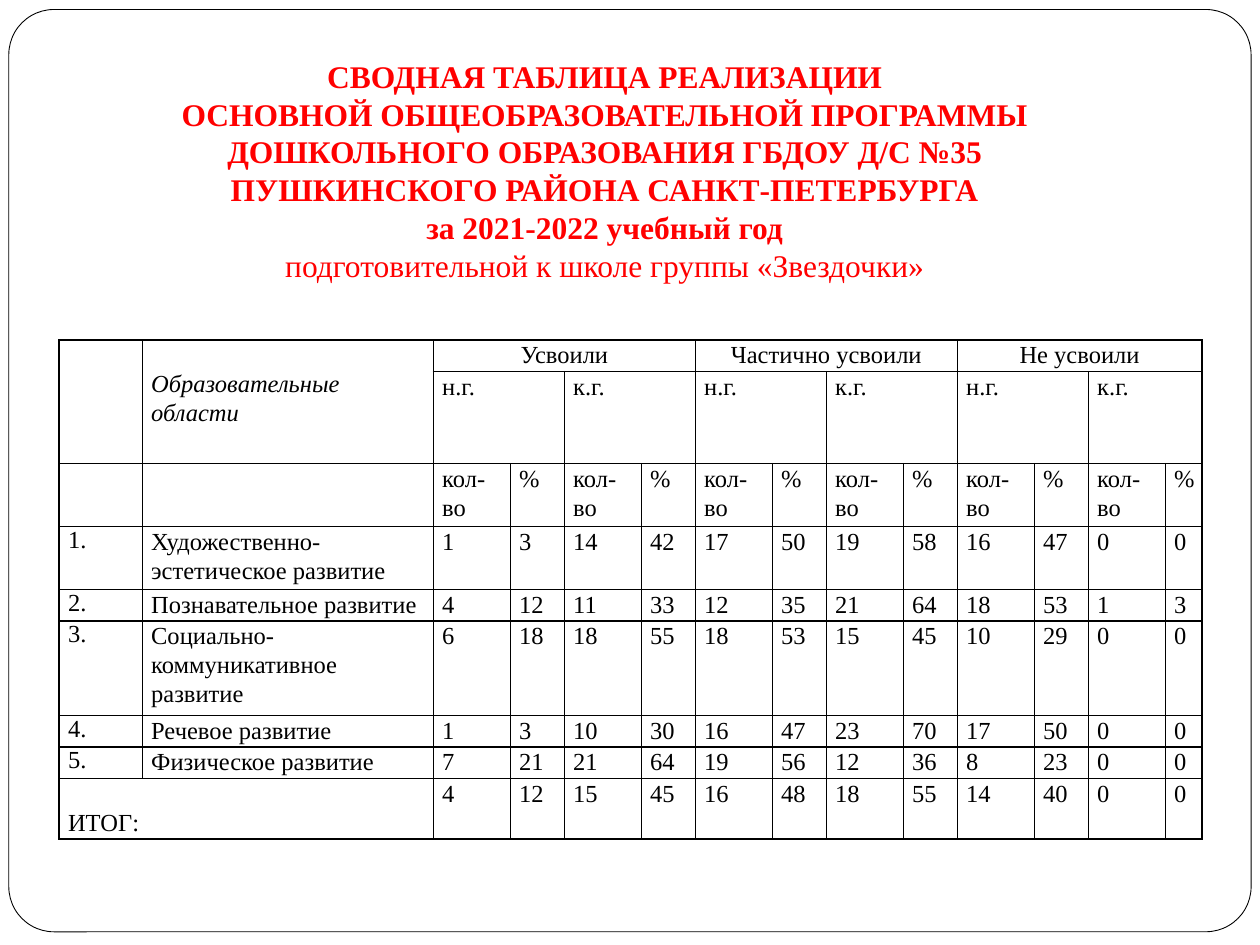
from lxml import etree
from pptx import Presentation
from pptx.dml.color import RGBColor
from pptx.enum.shapes import MSO_SHAPE
from pptx.enum.text import MSO_ANCHOR, MSO_AUTO_SIZE, PP_ALIGN
from pptx.oxml.ns import qn
from pptx.util import Inches, Pt

ROUNDED = MSO_SHAPE.ROUNDED_RECTANGLE
MIDDLE = MSO_ANCHOR.MIDDLE
GROW = MSO_AUTO_SIZE.SHAPE_TO_FIT_TEXT
CENTER, JUSTIFY = PP_ALIGN.CENTER, PP_ALIGN.JUSTIFY

BLACK = RGBColor(0, 0, 0)
WHITE = RGBColor(255, 255, 255)
RED = RGBColor(255, 0, 0)
FONT = "Times New Roman"
CELL_SIZE = Pt(14)

WIDTH, HEIGHT = 10, 7.5
COLUMNS = [0.66, 2.31] + [0.61, 0.43] * 5 + [0.61, 0.29]
ROWS = [0.25, 0.73, 0.5, 0.5, 0.25, 0.75, 0.25, 0.25, 0.48]
FIRST_VALUE, FIRST_AREA = 2, 3
LINE_GAP = 0.23  # one empty line above the text

TITLE = [
    ("СВОДНАЯ ТАБЛИЦА РЕАЛИЗАЦИИ", True),
    ("ОСНОВНОЙ ОБЩЕОБРАЗОВАТЕЛЬНОЙ ПРОГРАММЫ ДОШКОЛЬНОГО ОБРАЗОВАНИЯ "
     "ГБДОУ Д/С №35 ПУШКИНСКОГО РАЙОНА САНКТ-ПЕТЕРБУРГА", True),
    ("за 2021-2022 учебный год", True),
    ("подготовительной к школе группы «Звездочки»", False),
]
LEVELS = ["Усвоили", "Частично усвоили", "Не усвоили"]
PERIODS = ["н.г.", "к.г."]
MEASURES = ["кол-во", "%"]
AREAS = [
    ("Художественно-эстетическое развитие", [1, 3, 14, 42, 17, 50, 19, 58, 16, 47, 0, 0]),
    ("Познавательное развитие", [4, 12, 11, 33, 12, 35, 21, 64, 18, 53, 1, 3]),
    ("Социально-коммуникативное развитие", [6, 18, 18, 55, 18, 53, 15, 45, 10, 29, 0, 0]),
    ("Речевое развитие", [1, 3, 10, 30, 16, 47, 23, 70, 17, 50, 0, 0]),
    ("Физическое развитие", [7, 21, 21, 64, 19, 56, 12, 36, 8, 23, 0, 0]),
]
TOTALS = [4, 12, 15, 45, 16, 48, 18, 55, 14, 40, 0, 0]


def set_all(target, values):
    for name, value in values.items():
        setattr(target, name, value)


def add_span(para, text, color, **format_values):
    span = para.add_run()
    span.text = text
    set_all(span.font, {"name": FONT, **format_values})
    span.font.color.rgb = color


def add_frame(page):
    frame = page.shapes.add_shape(
        ROUNDED, Inches(WIDTH * 0.007), Inches(HEIGHT * 0.01),
        Inches(WIDTH * 0.986), Inches(HEIGHT * 0.976))
    frame.adjustments[0] = 0.049
    frame.shadow.inherit = False
    frame.fill.solid()
    frame.fill.fore_color.rgb = WHITE
    frame.line.color.rgb = BLACK
    frame.line.width = Pt(0.5)


def add_title(page):
    box = page.shapes.add_textbox(
        Inches(WIDTH * 0.07), Inches(HEIGHT * 0.052),
        Inches(WIDTH * 0.82), Inches(HEIGHT * 0.256))
    text = box.text_frame
    set_all(text, {"word_wrap": True, "vertical_anchor": MIDDLE, "auto_size": GROW})
    for index, (line, bold) in enumerate(TITLE):
        para = text.add_paragraph() if index else text.paragraphs[0]
        para.alignment = CENTER
        add_span(para, line, RED, size=Pt(18), bold=bold)


def style_cell(cell):
    """Give a cell thin black borders, no fill and narrow margins."""
    properties = cell._tc.get_or_add_tcPr()
    for side in ("a:lnL", "a:lnR", "a:lnT", "a:lnB"):
        border = etree.SubElement(properties, qn(side), w=str(Pt(1)))
        fill = etree.SubElement(border, qn("a:solidFill"))
        etree.SubElement(fill, qn("a:srgbClr"), val=str(BLACK))
    cell.fill.background()
    set_all(cell, {"margin_left": Inches(0.07), "margin_right": Inches(0.07),
                   "margin_top": 0, "margin_bottom": 0})
    end = cell.text_frame.paragraphs[0]._p.get_or_add_endParaRPr()
    end.set("sz", str(int(CELL_SIZE.pt * 100)))


def write_cell(cell, content, align=JUSTIFY, spacing=1.07, gap=0, italic=False):
    cell.margin_top = Inches(gap)
    para = cell.text_frame.paragraphs[0]
    set_all(para, {"alignment": align, "line_spacing": spacing})
    add_span(para, str(content), BLACK, size=CELL_SIZE, bold=False, italic=italic)


def write_number(cell, number):
    write_cell(cell, f"{number}.", spacing=None)
    indent = cell.text_frame.paragraphs[0]._p.get_or_add_pPr()
    indent.set("marL", str(Inches(0.38)))
    indent.set("indent", str(-Inches(0.38)))


def write_values(table, row, values):
    for column, value in enumerate(values, FIRST_VALUE):
        write_cell(table.cell(row, column), value)


def write_header(table):
    for column in range(FIRST_VALUE):
        table.cell(0, column).merge(table.cell(1, column))
    write_cell(table.cell(0, 1), "Образовательные области", gap=LINE_GAP, italic=True)
    groups = [(0, LEVELS, 4, CENTER), (1, PERIODS * len(LEVELS), 2, JUSTIFY)]
    for row, names, width, align in groups:
        for index, name in enumerate(names):
            column = FIRST_VALUE + index * width
            cell = table.cell(row, column)
            cell.merge(table.cell(row, column + width - 1))
            write_cell(cell, name, align)
    write_values(table, 2, MEASURES * len(PERIODS) * len(LEVELS))


def add_results(page):
    table = page.shapes.add_table(
        len(ROWS), len(COLUMNS), Inches(WIDTH * 0.047), Inches(HEIGHT * 0.36),
        Inches(sum(COLUMNS)), Inches(sum(ROWS))).table
    set_all(table, {"first_row": False, "horz_banding": False})
    for column, width in zip(table.columns, COLUMNS):
        column.width = Inches(width)
    for row, height in zip(table.rows, ROWS):
        row.height = Inches(height)
        for cell in row.cells:
            style_cell(cell)
    write_header(table)
    for number, (area, values) in enumerate(AREAS, 1):
        row = FIRST_AREA + number - 1
        write_number(table.cell(row, 0), number)
        write_cell(table.cell(row, 1), area)
        write_values(table, row, values)
    last = len(ROWS) - 1
    table.cell(last, 0).merge(table.cell(last, 1))
    write_cell(table.cell(last, 0), "ИТОГ:", gap=LINE_GAP)
    write_values(table, last, TOTALS)


def main():
    deck = Presentation()
    set_all(deck, {"slide_width": Inches(WIDTH), "slide_height": Inches(HEIGHT)})
    page = deck.slides.add_slide(deck.slide_layouts[6])
    add_frame(page)
    add_title(page)
    add_results(page)
    deck.save("out.pptx")


if __name__ == "__main__":
    main()
